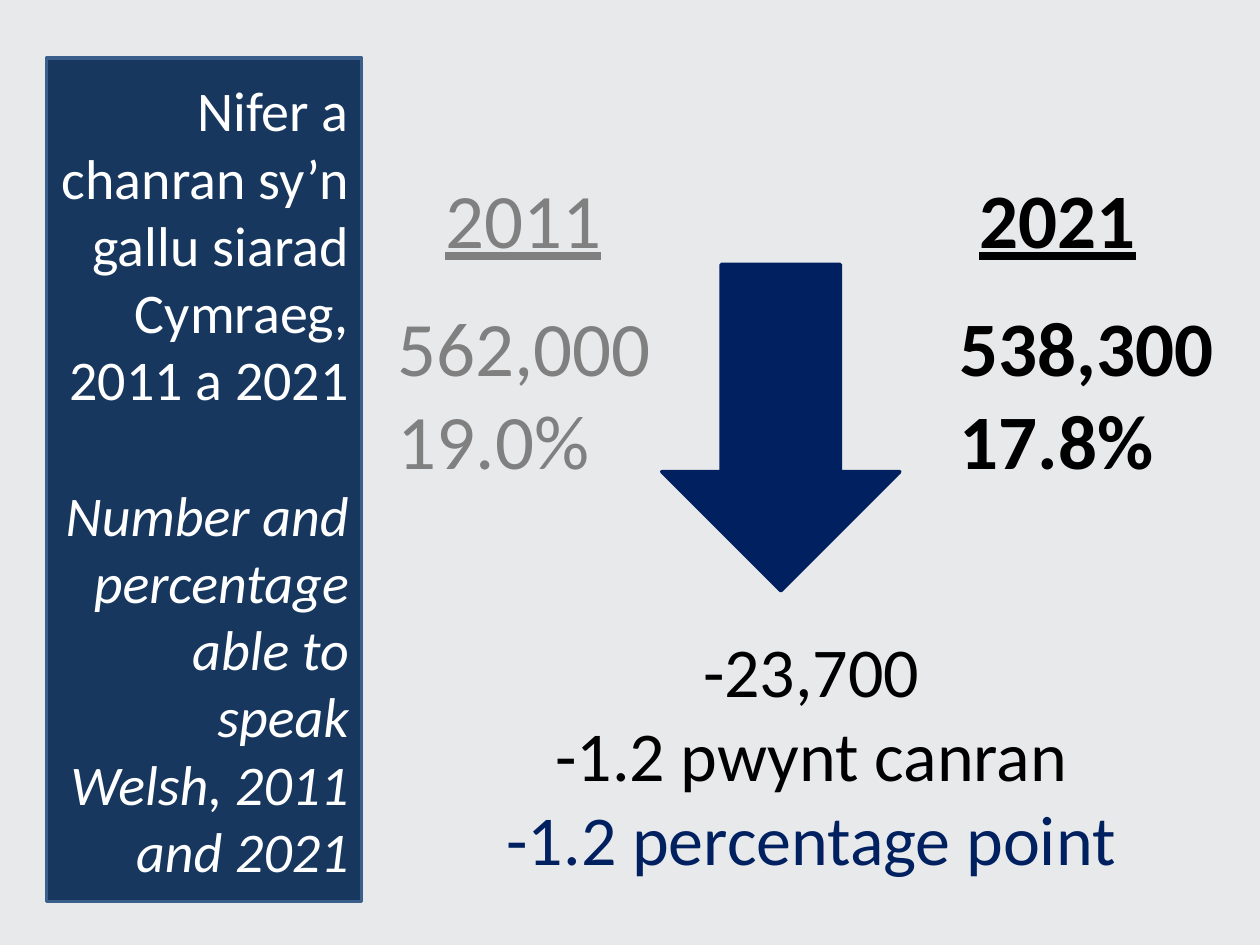
from pptx import Presentation
from pptx.dml.color import RGBColor
from pptx.enum.shapes import MSO_SHAPE
from pptx.enum.text import MSO_ANCHOR, MSO_AUTO_SIZE, PP_ALIGN
from pptx.util import Cm, Pt

LEFT, CENTER, RIGHT = PP_ALIGN.LEFT, PP_ALIGN.CENTER, PP_ALIGN.RIGHT
DOWN_ARROW = MSO_SHAPE.DOWN_ARROW
MIDDLE = MSO_ANCHOR.MIDDLE
NO_AUTOFIT = MSO_AUTO_SIZE.NONE
NAVY, BLACK, GREY, WHITE = "002060", "000000", "808080", "FFFFFF"


def rgb(value):
    return RGBColor.from_string(value)


def write(frame, text, size=44, color=BLACK, align=LEFT, bold=False,
          italic=False, underline=False, before=0):
    """Add one paragraph, filling the first one while it is empty."""
    frame.word_wrap = True
    paragraph = frame.paragraphs[0] if not frame.text else frame.add_paragraph()
    paragraph.alignment = align
    paragraph.space_before = Pt(before)
    run = paragraph.add_run()
    run.text = text
    font = run.font
    font.name, font.size, font.color.rgb = "Calibri", Pt(size), rgb(color)
    font.bold, font.italic, font.underline = bold, italic, underline


prs = Presentation()
prs.slide_width, prs.slide_height = Cm(25.4), Cm(19.05)
slide = prs.slides.add_slide(prs.slide_layouts[5])
slide.background.fill.solid()
slide.background.fill.fore_color.rgb = rgb("E8E9EB")

# Bilingual title panel
title = slide.shapes.title
title.left, title.top, title.width, title.height = Cm(0.94), Cm(1.17), Cm(6.35), Cm(17)
title.fill.solid()
title.fill.fore_color.rgb = rgb("17375E")
title.line.color.rgb = rgb("3A5F8C")
title.line.width = Pt(2)
title.text_frame.auto_size = NO_AUTOFIT
title.text_frame.vertical_anchor = MIDDLE
write(title.text_frame, "Nifer a chanran sy’n gallu siarad Cymraeg, 2011 a 2021",
      size=32, color=WHITE, align=RIGHT)
write(title.text_frame, "Number and percentage able to speak Welsh, 2011 and 2021",
      size=32, color=WHITE, align=RIGHT, italic=True, before=39)

# Arrow marking the fall
arrow = slide.shapes.add_shape(DOWN_ARROW, Cm(13.34), Cm(5.33), Cm(4.8), Cm(6.58))
arrow.shadow.inherit = False
arrow.fill.solid()
arrow.fill.fore_color.rgb = rgb(NAVY)
arrow.line.color.rgb = rgb(NAVY)
arrow.line.width = Pt(2)

# Year headings with number and percentage of speakers
censuses = [
    ("2011", ["562,000", "19.0%"], 6.93, 7.77, GREY, False),
    ("2021", ["538,300", "17.8%"], 17.7, 19.1, BLACK, True),
]
for year, figures, year_left, figures_left, color, bold in censuses:
    heading = slide.shapes.add_textbox(Cm(year_left), Cm(3.33), Cm(7.24), Cm(2.13))
    write(heading.text_frame, year, color=color, align=CENTER, bold=bold, underline=True)
    speakers = slide.shapes.add_textbox(Cm(figures_left), Cm(5.92), Cm(7.24), Cm(4.01))
    for figure in figures:
        write(speakers.text_frame, figure, color=color, bold=bold)

# Change between the two years
change = slide.shapes.add_textbox(Cm(7.77), Cm(12.52), Cm(17.17), Cm(5.38))
for text, color in [("-23,700", BLACK), ("-1.2 pwynt canran", BLACK),
                    ("-1.2 percentage point", NAVY)]:
    write(change.text_frame, text, size=40, color=color, align=CENTER)

prs.save("out.pptx")
